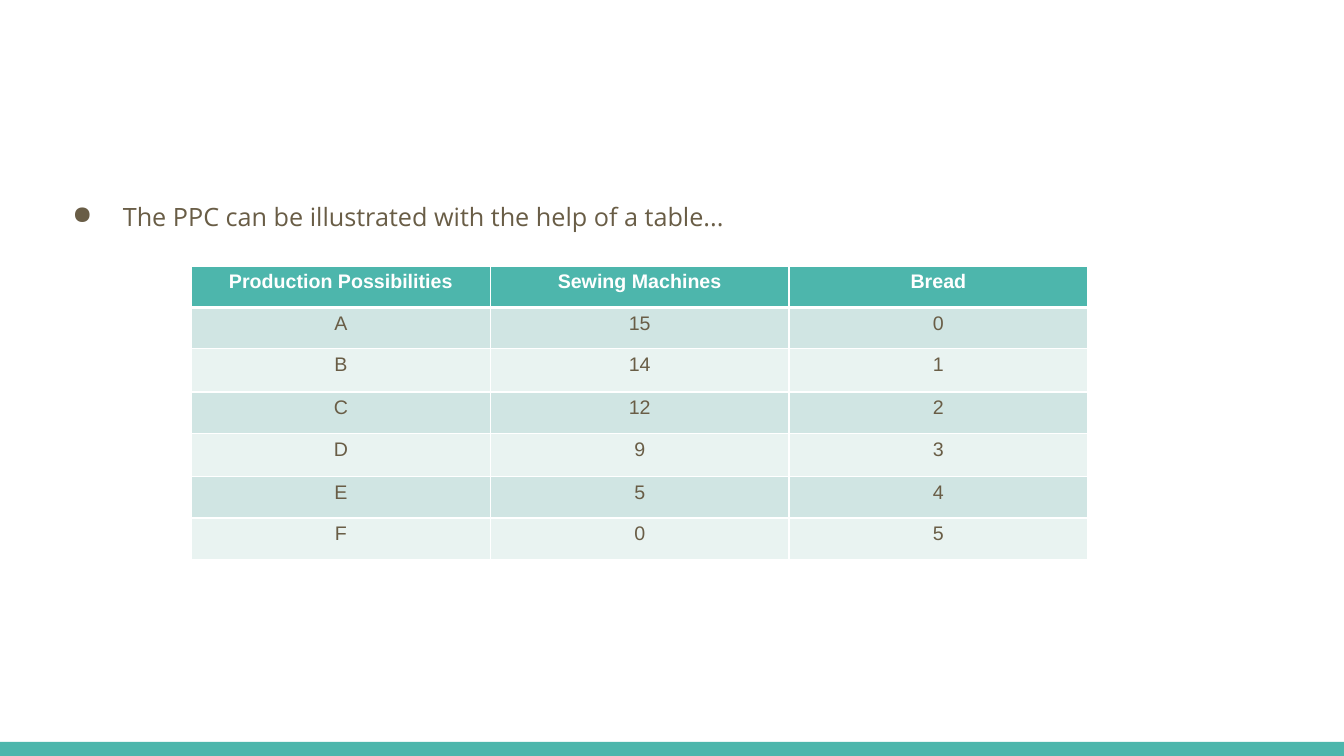
from lxml import etree
from pptx import Presentation
from pptx.dml.color import RGBColor
from pptx.enum.shapes import MSO_SHAPE
from pptx.enum.text import PP_ALIGN
from pptx.oxml.ns import qn
from pptx.util import Inches, Pt

RECTANGLE = MSO_SHAPE.RECTANGLE
CENTER = PP_ALIGN.CENTER
LEFT = PP_ALIGN.LEFT
SLIDE_WIDTH, SLIDE_HEIGHT = 13.33, 7.5
TEAL, BROWN, WHITE = "4DB6AC", "695D46", "FFFFFF"
BANDS = ("D0E5E3", "E9F3F1")
ROW_HEIGHTS = (0.41, 0.41, 0.43, 0.41, 0.43, 0.41, 0.41)
POSSIBILITIES = (
    ("Production Possibilities", "Sewing Machines", "Bread"),
    ("A", "15", "0"),
    ("B", "14", "1"),
    ("C", "12", "2"),
    ("D", "9", "3"),
    ("E", "5", "4"),
    ("F", "0", "5"),
)


def color(value):
    """Turn a hex string into a colour."""
    return RGBColor.from_string(value)


def fill_solid(target, value):
    """Give a shape or cell a plain fill."""
    target.fill.solid()
    target.fill.fore_color.rgb = color(value)


def write_text(paragraph, text, *, font="Arial", size=14, ink=BROWN,
               bold=False, align=LEFT):
    """Write one formatted run into a paragraph."""
    paragraph.alignment = align
    run = paragraph.add_run()
    run.text = text
    run.font.name = font
    run.font.size = Pt(size)
    run.font.bold = bold
    run.font.color.rgb = color(ink)


def add_bullet(paragraph, symbol, ink, margin, hanging):
    """Give a paragraph a coloured bullet with a hanging indent."""
    properties = paragraph._p.get_or_add_pPr()
    properties.set("marL", str(Inches(margin)))
    properties.set("indent", str(-Inches(hanging)))
    bullet_color = etree.SubElement(properties, qn("a:buClr"))
    etree.SubElement(bullet_color, qn("a:srgbClr"), val=ink)
    etree.SubElement(properties, qn("a:buChar"), char=symbol)


def add_border(cell, side, width):
    """Draw a white line on one side of a cell."""
    properties = cell._tc.get_or_add_tcPr()
    line = etree.SubElement(properties, qn(f"a:ln{side}"), w=str(Pt(width)))
    line_fill = etree.SubElement(line, qn("a:solidFill"))
    etree.SubElement(line_fill, qn("a:srgbClr"), val=WHITE)


def add_footer_band(slide, left, top, width, height):
    """Place the coloured band in the given box."""
    band = slide.shapes.add_shape(
        RECTANGLE, Inches(left), Inches(top), Inches(width), Inches(height))
    band.shadow.inherit = False
    fill_solid(band, TEAL)
    band.line.fill.background()


def add_body(slide, left, top, width, height):
    """Place the bulleted sentence in the given box."""
    box = slide.shapes.add_textbox(
        Inches(left), Inches(top), Inches(width), Inches(height))
    frame = box.text_frame
    frame.word_wrap = True
    frame.margin_left = frame.margin_right = Inches(0.1)
    frame.margin_top = frame.margin_bottom = Inches(0.1)
    paragraph = frame.paragraphs[0]
    add_bullet(paragraph, "●", BROWN, 0.67, 0.5)
    paragraph.line_spacing = 1.15
    write_text(paragraph, "The PPC can be illustrated with the help of a table...",
               font="Open Sans", size=18)


def add_possibilities_table(slide, left, top, width):
    """Place the table of possibilities in equal columns across the width."""
    column_count = len(POSSIBILITIES[0])
    table = slide.shapes.add_table(
        len(POSSIBILITIES), column_count, Inches(left), Inches(top),
        Inches(width), Inches(sum(ROW_HEIGHTS))).table
    for column in table.columns:
        column.width = Inches(width / column_count)
    for row_index, values in enumerate(POSSIBILITIES):
        table.rows[row_index].height = Inches(ROW_HEIGHTS[row_index])
        header = row_index == 0
        border_widths = {"L": 1, "R": 1, "T": 3 if row_index == 1 else 1,
                         "B": 3 if header else 1}
        for column_index, value in enumerate(values):
            cell = table.cell(row_index, column_index)
            for side, border_width in border_widths.items():
                add_border(cell, side, border_width)
            fill_solid(cell, TEAL if header else BANDS[(row_index - 1) % 2])
            write_text(cell.text_frame.paragraphs[0], value, bold=header,
                       ink=WHITE if header else BROWN, align=CENTER)


def main():
    """Build and save the slide."""
    presentation = Presentation()
    presentation.slide_width = Inches(SLIDE_WIDTH)
    presentation.slide_height = Inches(SLIDE_HEIGHT)
    slide = presentation.slides.add_slide(presentation.slide_layouts[6])
    band_height = 0.14
    add_footer_band(slide, 0, SLIDE_HEIGHT - band_height, SLIDE_WIDTH, band_height)
    add_body(slide, 0.45, 1.85, 12.42, 4.82)
    add_possibilities_table(slide, 1.9, 2.64, 8.89)
    presentation.save("out.pptx")


if __name__ == "__main__":
    main()
